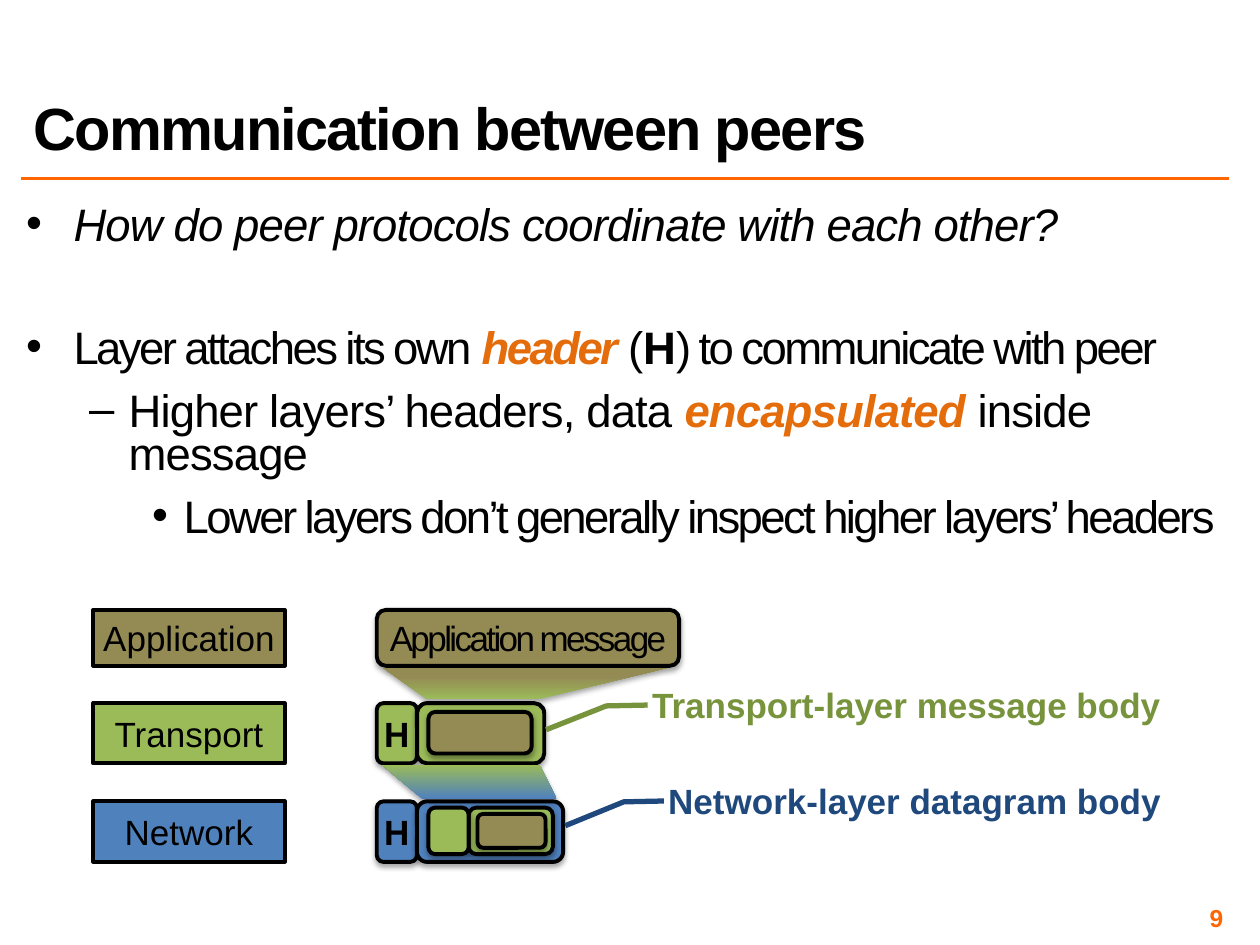
from lxml import etree
from pptx import Presentation
from pptx.dml.color import RGBColor
from pptx.enum import shapes, text
from pptx.oxml.ns import qn
from pptx.util import Pt

APP, TRANSPORT, NETWORK = "948A54", "9BBB59", "4F81BD"
BLACK, ORANGE, ACCENT = "000000", "FF6600", "E46C0A"
SHAPE, ALIGN, ANCHOR = shapes.MSO_SHAPE, text.PP_ALIGN, text.MSO_ANCHOR
ROW_TOPS, ROW_HEIGHTS = (0, 53.3, 109.4), (32, 34.4, 34.6)
HEADER_W = 23


def rgb(color):
    return RGBColor.from_string(color)


def pts(*values):
    return [Pt(v) for v in values]


def set_frame(tf, inset=None, anchor=ANCHOR.MIDDLE, wrap=True,
              fit=text.MSO_AUTO_SIZE.NONE):
    tf.word_wrap, tf.auto_size, tf.vertical_anchor = wrap, fit, anchor
    if inset is not None:
        tf.margin_left = tf.margin_top = tf.margin_right = tf.margin_bottom = Pt(inset)


def style_font(font, size, color=BLACK, bold=False, italic=False):
    font.name, font.size, font.bold, font.italic = "Arial", Pt(size), bold, italic
    font.color.rgb = rgb(color)


def add_run(p, words, spacing=0):
    r = p.add_run()
    r.text = words
    if spacing:
        r.font._element.set("spc", str(round(spacing * 100)))
    return r


def write(p, words, size, color=BLACK, bold=False, align=ALIGN.CENTER, spacing=0):
    p.alignment = align
    style_font(p.font, size, color, bold)
    add_run(p, words, spacing)


def add_shadow(sp):
    effects = etree.SubElement(sp._element.spPr, qn("a:effectLst"))
    shadow = etree.SubElement(effects, qn("a:outerShdw"), blurRad=str(Pt(3.1)),
                              dist=str(Pt(1.8)), dir="5400000", rotWithShape="0")
    color = etree.SubElement(shadow, qn("a:srgbClr"), val=BLACK)
    etree.SubElement(color, qn("a:alpha"), val="35000")


def add_box(s, box, fill, kind=SHAPE.ROUNDED_RECTANGLE):
    sp = s.shapes.add_shape(kind, *pts(*box))
    sp.fill.solid()
    sp.fill.fore_color.rgb = rgb(fill)
    sp.line.color.rgb = rgb(BLACK)
    sp.line.width = Pt(2.25)
    if kind == SHAPE.ROUNDED_RECTANGLE:
        add_shadow(sp)
    else:
        sp.shadow.inherit = False
    return sp


def add_title(s, box):
    x, y, w, h = box
    title = s.shapes.title
    title.left, title.top, title.width, title.height = pts(*box)
    set_frame(title.text_frame, anchor=ANCHOR.BOTTOM)
    p = title.text_frame.paragraphs[0]
    write(p, "Communication between peers", 34, bold=True, align=ALIGN.LEFT, spacing=-1)
    p.line_spacing = 0.8
    # Rule under the title
    rule = s.shapes.add_connector(shapes.MSO_CONNECTOR.STRAIGHT,
                                  *pts(x, y + h + 6, x + w, y + h + 6))
    rule.line.color.rgb = rgb(ORANGE)
    rule.line.width = Pt(2)
    etree.SubElement(rule._element.spPr, qn("a:effectLst"))


def add_body(s, box):
    # Level, space before, letter spacing, runs as (words, style)
    items = [
        (0, 10.8, -0.5, [("How do peer protocols coordinate with each other?", "i")]),
        (0, 45.5, -1.5, [("Layer attaches its own ", ""), ("header ", "key"), ("(", ""),
                         ("H", "b"), (") to communicate with peer", "")]),
        (1, 10.8, -0.5, [("Higher layers’ headers, data ", ""), ("encapsulated ", "key"),
                         ("inside message", "")]),
        (2, 10.8, -1.5,
         [("Lower layers don’t generally inspect higher layers’ headers", "")]),
    ]
    indents = [(27, -27), (58.5, -22.5), (90, -18)]
    body = s.placeholders[1]
    body.left, body.top, body.width, body.height = pts(*box)
    tf = body.text_frame
    set_frame(tf, 3, ANCHOR.TOP)
    for i, (level, before, spacing, runs) in enumerate(items):
        p = tf.paragraphs[0] if i == 0 else tf.add_paragraph()
        p.level, p.line_spacing, p.space_before = level, 0.8, Pt(before)
        p.space_after = Pt(0)
        margin, indent = indents[level]
        pPr = p._p.get_or_add_pPr()
        pPr.set("marL", str(Pt(margin)))
        pPr.set("indent", str(Pt(indent)))
        style_font(p.font, 26)
        for words, style in runs:
            r = add_run(p, words, spacing)
            if style in ("b", "key"):
                r.font.bold = True
            if style in ("i", "key"):
                r.font.italic = True
            if style == "key":
                r.font.color.rgb = rgb(ACCENT)


def add_layers(s, box):
    x, y, w, _ = box
    names = [("Application", APP), ("Transport", TRANSPORT), ("Network", NETWORK)]
    for (name, fill), top, height in zip(names, ROW_TOPS, ROW_HEIGHTS):
        sp = add_box(s, (x, y + top, w, height), fill, SHAPE.RECTANGLE)
        set_frame(sp.text_frame, wrap=False)
        write(sp.text_frame.paragraphs[0], name, 20)


def add_funnel(s, corners, upper, lower, upper_stop):
    first, *rest = [tuple(pts(*c)) for c in corners]
    builder = s.shapes.build_freeform(*first)
    builder.add_line_segments(rest, close=True)
    sp = builder.convert_to_shape()
    sp.fill.gradient()
    sp.fill.gradient_angle = 90
    for stop, color, position in zip(sp.fill.gradient_stops, (lower, upper),
                                     (0, upper_stop)):
        stop.color.rgb = rgb(color)
        stop.position = position
    sp.line.fill.background()
    add_shadow(sp)


def add_packets(s, box):
    x, y, w, _ = box
    tops = [y + top for top in ROW_TOPS]
    inside = x + HEADER_W

    # Application message
    message = add_box(s, (x, tops[0], w, ROW_HEIGHTS[0]), APP)
    set_frame(message.text_frame, 0)
    write(message.text_frame.paragraphs[0], "Application message", 20, spacing=-1.5)

    # Header and body of the two lower layers
    for top, height, fill, body_w in zip(tops[1:], ROW_HEIGHTS[1:],
                                         (TRANSPORT, NETWORK), (72.7, 83.5)):
        header = add_box(s, (x, top, HEADER_W, height), fill)
        set_frame(header.text_frame, 0)
        write(header.text_frame.paragraphs[0], "H", 20, bold=True)
        add_box(s, (inside, top, body_w, height), fill)

    # Encapsulated contents
    add_box(s, (inside + 6.5, tops[1] + 5, 59, 23.8), APP)
    add_box(s, (inside + 6.5 + HEADER_W, tops[2] + 3.6, 48.2, 26.6), TRANSPORT)
    add_box(s, (inside + 34.6, tops[2] + 7.2, 38.9, 19.4), APP)
    add_box(s, (inside + 6.5, tops[2] + 3.6, HEADER_W, 26.6), TRANSPORT)

    # Funnels between the rows
    add_funnel(s, [(x + 3.6, y + 33.1), (x + 28.8, y + 51.1), (x + 92.1, y + 51.1),
                   (x + 166.3, y + 33.1)], APP, TRANSPORT, 0.72)
    add_funnel(s, [(x + 2.9, y + 88.5), (x + 25.9, y + 108), (x + 102.9, y + 108),
                   (x + 92.9, y + 88.5)], TRANSPORT, NETWORK, 1)


def add_callout(s, box, words, color):
    sp = s.shapes.add_shape(SHAPE.LINE_CALLOUT_2_NO_BORDER, *pts(*box))
    for i, value in enumerate((0.516, 0.019, 0.531, -0.058, 0.961, -0.17)):
        sp.adjustments[i] = value
    sp.fill.background()
    sp.line.color.rgb = rgb(color)
    sp.line.width = Pt(3)
    sp.shadow.inherit = False
    set_frame(sp.text_frame, wrap=False, fit=text.MSO_AUTO_SIZE.SHAPE_TO_FIT_TEXT)
    write(sp.text_frame.paragraphs[0], words, 20, color, bold=True)


def add_page_number(s, box):
    tf = s.shapes.add_textbox(*pts(*box)).text_frame
    set_frame(tf, 3)
    write(tf.paragraphs[0], "9", 14, ORANGE, bold=True, align=ALIGN.RIGHT)


def main():
    prs = Presentation()
    prs.slide_width, prs.slide_height = pts(720, 540)
    s = prs.slides.add_slide(prs.slide_layouts[1])
    add_title(s, (12, 12, 690, 84))
    add_body(s, (12, 115, 689, 212.4))
    add_layers(s, (53.3, 348.5, 109.4, 144))
    add_packets(s, (215.3, 348.5, 172.8, 144))
    add_callout(s, (364.3, 386.6, 307.4, 31.7), "Transport-layer message body", "77933C")
    add_callout(s, (373.7, 441.4, 298, 31.7), "Network-layer datagram body", "1F497D")
    add_page_number(s, (534.2, 516.2, 167.8, 16.6))
    prs.save("out.pptx")


if __name__ == "__main__":
    main()
